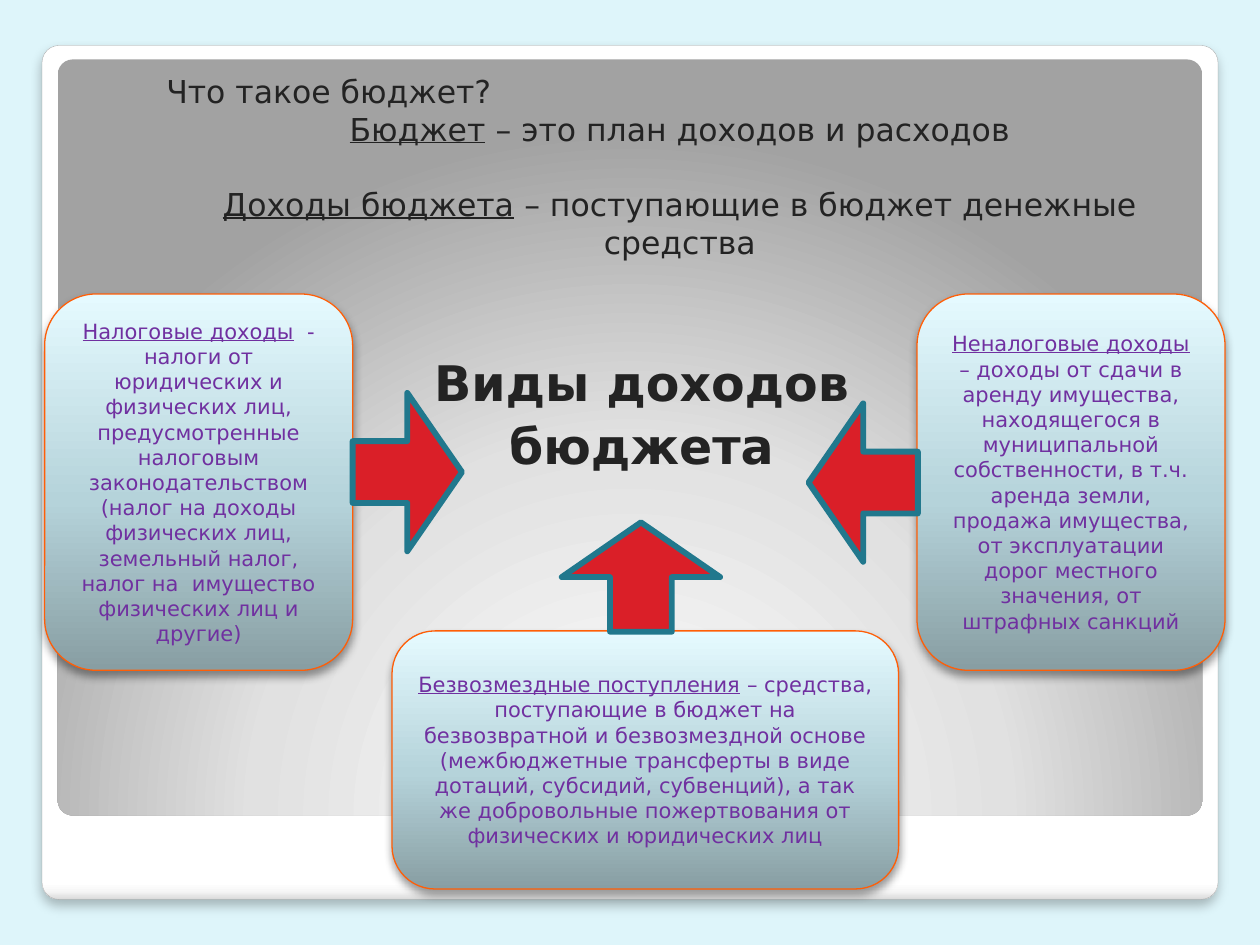
from pptx import Presentation
from pptx.dml.color import RGBColor
from pptx.enum.shapes import MSO_SHAPE as Shape
from pptx.enum.text import MSO_ANCHOR as Anchor, MSO_AUTO_SIZE as AutoSize, PP_ALIGN as Align
from pptx.oxml import parse_xml
from pptx.oxml.ns import nsdecls, qn
from pptx.util import Pt

FONT = "DejaVu Sans"
SKY = RGBColor(0xDE, 0xF5, 0xFA)
GREY = RGBColor(0xA4, 0xA4, 0xA4)
DARK = RGBColor(0x23, 0x23, 0x23)
PURPLE = RGBColor(0x70, 0x30, 0xA0)
ORANGE = RGBColor(0xFF, 0x5E, 0x07)
RED = RGBColor(0xDA, 0x1F, 0x28)
TEAL = RGBColor(0x21, 0x78, 0x8D)
WHITE = RGBColor(0xFF, 0xFF, 0xFF)
SILVER = RGBColor(0xE1, 0xE1, 0xE1)
ASH = RGBColor(0xA2, 0xA2, 0xA2)

FRAME_STOPS = [(0, WHITE), (98, WHITE), (99, RGBColor(0xF7, 0xF7, 0xF7)),
               (100, RGBColor(0xDA, 0xDA, 0xDA))]
PANEL_STOPS = [(0, WHITE), (55, SILVER), (100, ASH)]
CARD_STOPS = [(0, RGBColor(0x88, 0x9E, 0xA3)), (45, RGBColor(0xB5, 0xD3, 0xDA)),
              (100, RGBColor(0xE5, 0xFA, 0xFF))]
LINEAR = '<a:lin ang="{}" scaled="0"/>'
RADIAL = ('<a:path path="circle"><a:fillToRect l="50000" t="175000" '
          'r="50000" b="-75000"/></a:path>')

CARDS = [
    ((524, 168, 176, 215), "Неналоговые доходы",
     " – доходы от сдачи в аренду имущества, находящегося в муниципальной "
     "собственности, в т.ч. аренда земли, продажа имущества, от эксплуатации "
     "дорог местного значения, от штрафных санкций"),
    ((25.5, 168, 176, 215), "Налоговые доходы",
     "  - налоги от юридических и физических лиц, предусмотренные налоговым "
     "законодательством (налог на доходы физических лиц, земельный налог, "
     "налог на  имущество физических лиц и другие)"),
    ((224, 360.5, 289.5, 147.5), "Безвозмездные поступления",
     " – средства, поступающие в бюджет на безвозвратной и безвозмездной основе "
     "(межбюджетные трансферты в виде дотаций, субсидий, субвенций), а так же "
     "добровольные пожертвования от физических и юридических лиц"),
]
ARROWS = [(335, 284.5, 270), (201.5, 224.5, 0), (462, 230.5, 180)]


def set_gradient(shape, stops, direction):
    shape.fill.gradient()
    marks = "".join(f'<a:gs pos="{pos * 1000}"><a:srgbClr val="{color}"/></a:gs>'
                    for pos, color in stops)
    gradient = parse_xml(f'<a:gradFill {nsdecls("a")} rotWithShape="1">'
                         f'<a:gsLst>{marks}</a:gsLst>{direction}</a:gradFill>')
    properties = shape.element.spPr
    properties.replace(properties.find(qn("a:gradFill")), gradient)


def add_shadow(shape, blur, distance, opacity):
    shape.element.spPr.find(qn("a:effectLst")).append(parse_xml(
        f'<a:outerShdw {nsdecls("a")} blurRad="{Pt(blur)}" dist="{Pt(distance)}" '
        f'dir="5400000" algn="ctr" rotWithShape="0"><a:srgbClr val="000000">'
        f'<a:alpha val="{opacity * 1000}"/></a:srgbClr></a:outerShdw>'))


def add_shape(page, kind, bounds, line=None, width=1):
    shape = page.shapes.add_shape(kind, *map(Pt, bounds))
    shape.shadow.inherit = False
    if line is None:
        shape.line.fill.background()
    else:
        shape.line.color.rgb = line
        shape.line.width = Pt(width)
    return shape


def add_text(para, text, size=18, color=DARK, bold=False, underline=False):
    span = para.add_run()
    span.text = text
    font = span.font
    font.name, font.size, font.bold = FONT, Pt(size), bold
    font.underline = underline
    font.color.rgb = color


def add_term(para, term, meaning, **style):
    para.alignment = Align.CENTER
    add_text(para, term, underline=True, **style)
    add_text(para, meaning, **style)


def add_panels(page):
    frame = add_shape(page, Shape.ROUNDED_RECTANGLE, (24, 26, 672, 488), GREY, 0.16)
    set_gradient(frame, FRAME_STOPS, LINEAR.format(5400000))
    add_shadow(frame, 6, 4, 25)
    panel = add_shape(page, Shape.ROUNDED_RECTANGLE, (33, 34, 654, 432))
    set_gradient(panel, PANEL_STOPS, RADIAL)
    for shape in (frame, panel):
        shape.adjustments[0] = 0.02


def place_title(page, lines):
    title = page.shapes.title
    title.element.getparent().append(title.element)
    title.left, title.top, title.width, title.height = map(Pt, (226, 190, 281, 92))
    frame = title.text_frame
    frame.auto_size = AutoSize.NONE
    frame.vertical_anchor = Anchor.MIDDLE
    frame.margin_left = frame.margin_right = 0
    for index, line in enumerate(lines):
        para = frame.add_paragraph() if index else frame.paragraphs[0]
        para.alignment = Align.CENTER
        para.space_before = Pt(2.5)
        add_text(para, line, size=28, bold=True)


def add_definitions(page):
    frame = page.shapes.add_textbox(*map(Pt, (88, 37.5, 601, 94))).text_frame
    frame.word_wrap = True
    add_text(frame.paragraphs[0], "Что такое бюджет?")
    add_term(frame.add_paragraph(), "Бюджет", " – это план доходов и расходов")
    para = frame.add_paragraph()
    para.space_before = Pt(21.5)
    add_term(para, "Доходы бюджета", " – поступающие в бюджет денежные средства")


def add_card(page, bounds, term, meaning):
    card = add_shape(page, Shape.ROUNDED_RECTANGLE, bounds, ORANGE, 0.75)
    set_gradient(card, CARD_STOPS, LINEAR.format(16200000))
    add_shadow(card, 5.2, 3, 40)
    card.text_frame.word_wrap = True
    card.text_frame.vertical_anchor = Anchor.MIDDLE
    add_term(card.text_frame.paragraphs[0], term, meaning, size=12, color=PURPLE)


def add_arrow(page, left, top, angle):
    arrow = add_shape(page, Shape.RIGHT_ARROW, (left, top, 62.5, 90.5), TEAL, 3.35)
    arrow.adjustments[0] = 0.39
    arrow.rotation = angle
    arrow.fill.solid()
    arrow.fill.fore_color.rgb = RED


def main():
    deck = Presentation()
    deck.slide_width, deck.slide_height = Pt(720), Pt(540)
    page = deck.slides.add_slide(deck.slide_layouts[5])
    page.background.fill.solid()
    page.background.fill.fore_color.rgb = SKY
    add_panels(page)
    place_title(page, ["Виды доходов", "бюджета"])
    add_definitions(page)
    for card in CARDS:
        add_card(page, *card)
    for arrow in ARROWS:
        add_arrow(page, *arrow)
    deck.save("out.pptx")


if __name__ == "__main__":
    main()
